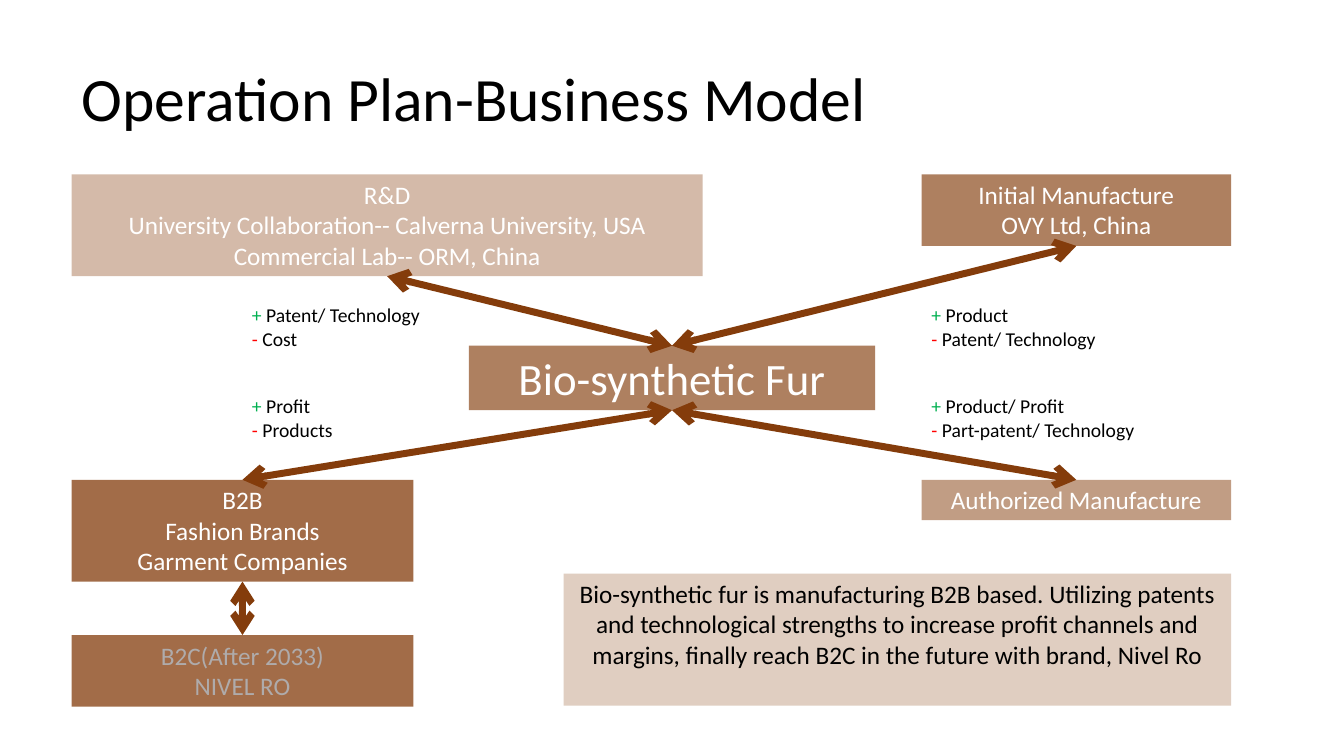
from lxml import etree
from pptx import Presentation
from pptx.dml.color import RGBColor
from pptx.enum.shapes import MSO_CONNECTOR, MSO_SHAPE
from pptx.enum.text import MSO_ANCHOR, PP_ALIGN
from pptx.oxml.ns import qn
from pptx.util import Inches, Pt

LINE = MSO_CONNECTOR.STRAIGHT
RECT = MSO_SHAPE.RECTANGLE
TOP, MID = MSO_ANCHOR.TOP, MSO_ANCHOR.MIDDLE
LEFT, MIDST = PP_ALIGN.LEFT, PP_ALIGN.CENTER
UP, DOWN = 0, 2

BROWN = RGBColor(0x84, 0x3C, 0x0B)
WHITE = RGBColor(0xFF, 0xFF, 0xFF)
BLACK = RGBColor(0, 0, 0)
GRAY = RGBColor(0xAF, 0xAB, 0xAB)
GREEN = RGBColor(0x00, 0xB0, 0x50)
RED = RGBColor(0xFF, 0, 0)

WIDE, HIGH = 13.33, 7.5
CELL = 0.1
HEAD = (0.71, 0.28, 11.5, 1.45)
BODY = (0.71, 1.73, 11.5, 5.28)


def cells(box, col, row, cols, rows):
    left, top = box[:2]
    return [Inches(n) for n in (left + col * CELL, top + row * CELL,
                                cols * CELL, rows * CELL)]


def write(shape, lines, size=18, color=WHITE, align=MIDST, anchor=TOP,
          wrap=True, space=1.0):
    frame = shape.text_frame
    frame.word_wrap = wrap
    frame.vertical_anchor = anchor
    for i, line in enumerate(lines):
        para = frame.add_paragraph() if i else frame.paragraphs[0]
        para.alignment = align
        para.line_spacing = space
        parts = [(line, color)] if isinstance(line, str) else line
        for text, tint in parts:
            run = para.add_run()
            run.text = text
            run.font.name = "Calibri"
            run.font.size = Pt(size)
            run.font.color.rgb = tint


def panel(slide, spot, lines, alpha, **style):
    shape = slide.shapes.add_shape(RECT, *spot)
    shape.shadow.inherit = False
    shape.fill.solid()
    shape.fill.fore_color.rgb = BROWN
    tint = shape.fill._xPr.find(".//" + qn("a:srgbClr"))
    etree.SubElement(tint, qn("a:alpha"), val=str(alpha * 1000))
    shape.line.fill.background()
    write(shape, lines, **style)
    return shape


def arrow(slide, start, side, end, face):
    link = slide.shapes.add_connector(LINE, 0, 0, 0, 0)
    link.begin_connect(start, side)
    link.end_connect(end, face)
    link.line.color.rgb = BROWN
    link.line.width = Pt(5)
    line = link.line._get_or_add_ln()
    for tag in ("a:headEnd", "a:tailEnd"):
        etree.SubElement(line, qn(tag), type="arrow")
    etree.SubElement(link._element.spPr, qn("a:effectLst"))


def note(slide, spot, gain, cost):
    shape = slide.shapes.add_textbox(*spot)
    lines = [[(sign + " ", tint), (text, BLACK)]
             for sign, tint, text in (("+", GREEN, gain), ("-", RED, cost))]
    write(shape, lines, size=14, align=LEFT, wrap=False)


def title(slide, box):
    shape = slide.shapes.add_textbox(*[Inches(n) for n in box])
    write(shape, ["Operation Plan-Business Model"], size=44, color=BLACK,
          align=LEFT, anchor=MID, space=0.9)


def model(slide, box):
    right, low = 84.3, 30.3
    maker = panel(slide, cells(box, right, 0, 30.7, 7.1),
                  ["Initial Manufacture", "OVY Ltd, China"], 65)
    lab = panel(slide, cells(box, 0, 0, 62.6, 10.1),
                ["R&D",
                 "University Collaboration-- Calverna University, USA",
                 "Commercial Lab-- ORM, China"], 35)
    trade = panel(slide, cells(box, 0, low, 33.9, 10.1),
                  ["B2B", "Fashion Brands", "Garment Companies"], 75)
    agent = panel(slide, cells(box, right, low, 30.7, 4),
                  ["Authorized Manufacture"], 50)
    core = panel(slide, cells(box, 39.4, 17, 40.3, 6.4),
                 ["Bio-synthetic Fur"], 65, size=32)
    shop = panel(slide, cells(box, 0, 45.7, 33.9, 7.1),
                 ["B2C(After 2033)", "NIVEL RO"], 75, color=GRAY)

    for ends in ((lab, DOWN, core, UP), (core, UP, maker, DOWN),
                 (core, DOWN, agent, UP), (trade, UP, core, DOWN),
                 (shop, UP, trade, DOWN)):
        arrow(slide, *ends)

    for col, row, cols, gain, cost in (
            (16.9, 12.3, 20.7, "Patent/ Technology", "Cost"),
            (right, 12.3, 20.3, "Product", "Patent/ Technology"),
            (16.9, 21.3, 11.2, "Profit", "Products"),
            (right, 21.3, 24.5, "Product/ Profit",
             "Part-patent/ Technology")):
        note(slide, cells(box, col, row, cols, 5.7), gain, cost)

    panel(slide, cells(box, 48.8, 39.6, 66.2, 13.1),
          ["Bio-synthetic fur is manufacturing B2B based. Utilizing patents "
           "and technological strengths to increase profit channels and "
           "margins, finally reach B2C in the future with brand, Nivel Ro"],
          25, color=BLACK)


def main():
    deck = Presentation()
    deck.slide_width, deck.slide_height = Inches(WIDE), Inches(HIGH)
    slide = deck.slides.add_slide(deck.slide_layouts[6])
    title(slide, HEAD)
    model(slide, BODY)
    deck.save("out.pptx")


if __name__ == "__main__":
    main()
